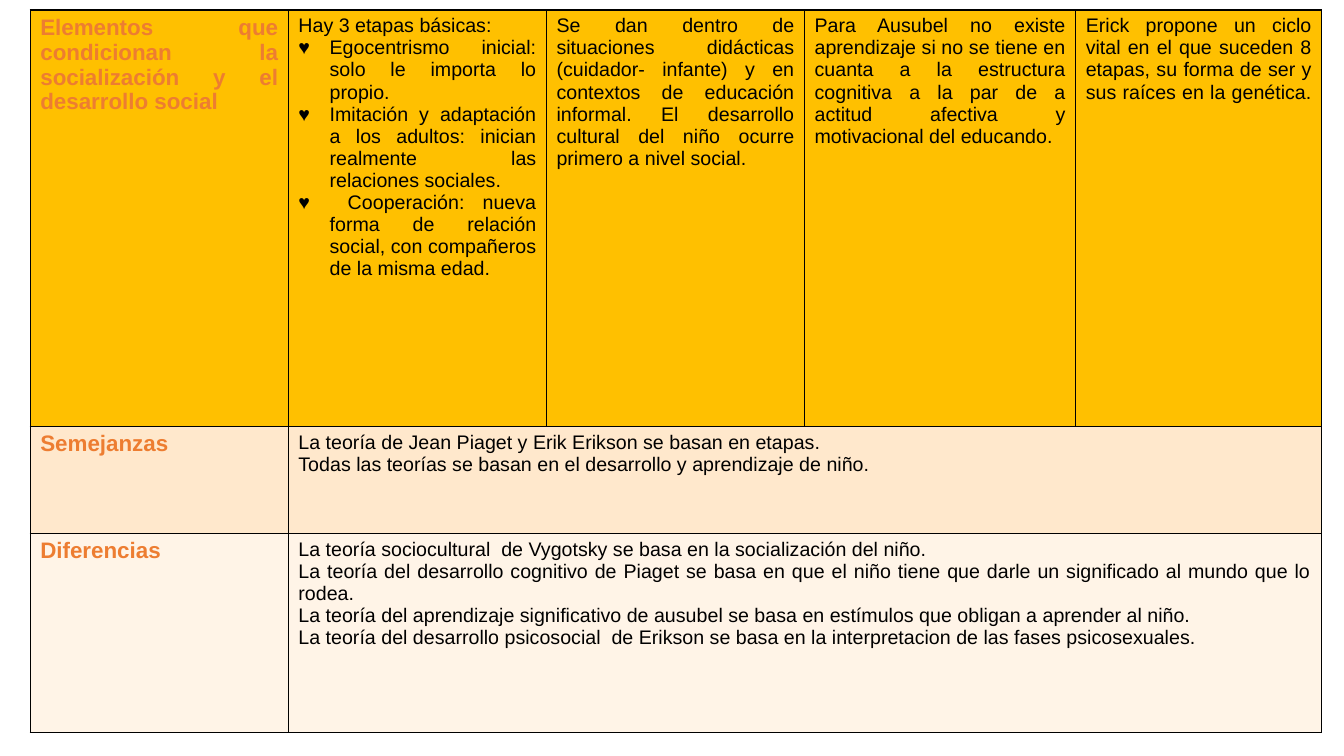
from lxml import etree
from pptx import Presentation
from pptx.dml.color import RGBColor
from pptx.enum.text import PP_ALIGN
from pptx.oxml.ns import qn
from pptx.util import Inches, Pt

JUSTIFY = PP_ALIGN.JUSTIFY
FONT = "Arial"
HEADING = {"size": 16, "color": "ED7D31", "bold": True}
BODY = {"size": 14, "color": "000000", "bold": False}
BORDER_COLOR, BORDER_WIDTH = "000000", 1
BULLET, BULLET_INDENT = "♥", 0.31

# Content: each row has a fill, a heading and cells made of paragraphs
ROWS = [
    ("FFC000", "Elementos que condicionan la socialización y el desarrollo social", [
        ["Hay 3 etapas básicas:",
         (BULLET, "Egocentrismo inicial: solo le importa lo propio."),
         (BULLET, "Imitación y adaptación a los adultos: inician realmente las relaciones sociales."),
         (BULLET, " Cooperación: nueva forma de relación social, con compañeros de la misma edad.")],
        ["Se dan dentro de situaciones didácticas (cuidador- infante) y en contextos de "
         "educación informal. El desarrollo cultural del niño ocurre primero a nivel social. "],
        ["Para Ausubel no existe aprendizaje si no se tiene en cuanta a la estructura "
         "cognitiva a la par de a actitud afectiva y motivacional del educando. "],
        ["Erick propone un ciclo vital en el que suceden 8 etapas, su forma de ser y "
         "sus raíces en la genética. "],
    ]),
    ("FFE8CC", "Semejanzas ", [
        ["La teoría de Jean Piaget y Erik Erikson se basan en etapas.",
         "Todas las teorías se basan en el desarrollo y aprendizaje de niño. "],
    ]),
    ("FFF4E7", "Diferencias ", [
        ["La teoría sociocultural  de Vygotsky se basa en la socialización del niño.",
         "La teoría del desarrollo cognitivo de Piaget se basa en que el niño tiene que "
         "darle un significado al mundo que lo rodea. ",
         "La teoría del aprendizaje significativo de ausubel se basa en estímulos que "
         "obligan a aprender al niño.",
         "La teoría del desarrollo psicosocial  de Erikson se basa en la interpretacion "
         "de las fases psicosexuales. "],
    ]),
]

# Grid, in inches
LEFT, TOP = 0.3, 0.1
COLUMN_WIDTHS = [2.56, 2.56, 2.56, 2.69, 2.44]
ROW_HEIGHTS = [4.13, 1.06, 1.98]


def rgb(color):
    return RGBColor.from_string(color)


def write_paragraph(paragraph, text, size, color, bold, bullet=None):
    paragraph.alignment = JUSTIFY
    run = paragraph.add_run()
    run.text = text
    run.font.name = FONT
    run.font.size = Pt(size)
    run.font.bold = bold
    run.font.color.rgb = rgb(color)
    if bullet:
        properties = paragraph._p.get_or_add_pPr()
        properties.set("marL", str(Inches(BULLET_INDENT)))
        properties.set("indent", str(-Inches(BULLET_INDENT)))
        etree.SubElement(properties, qn("a:buFont"), typeface=FONT)
        etree.SubElement(properties, qn("a:buChar"), char=bullet)


def fill_cell(cell, paragraphs, text_format):
    frame = cell.text_frame
    for index, item in enumerate(paragraphs):
        paragraph = frame.add_paragraph() if index else frame.paragraphs[0]
        bullet, text = item if isinstance(item, tuple) else (None, item)
        write_paragraph(paragraph, text, bullet=bullet, **text_format)


def style_cell(cell, fill_color):
    properties = cell._tc.get_or_add_tcPr()
    for side in ("a:lnL", "a:lnR", "a:lnT", "a:lnB"):
        line = etree.SubElement(properties, qn(side), w=str(Pt(BORDER_WIDTH)))
        solid = etree.SubElement(line, qn("a:solidFill"))
        etree.SubElement(solid, qn("a:srgbClr"), val=BORDER_COLOR)
    cell.fill.solid()
    cell.fill.fore_color.rgb = rgb(fill_color)


def main():
    presentation = Presentation()
    presentation.slide_width = Inches(13.33)
    presentation.slide_height = Inches(7.5)
    slide = presentation.slides.add_slide(presentation.slide_layouts[6])

    # Comparison table
    table = slide.shapes.add_table(
        len(ROW_HEIGHTS), len(COLUMN_WIDTHS), Inches(LEFT), Inches(TOP),
        Inches(sum(COLUMN_WIDTHS)), Inches(sum(ROW_HEIGHTS))).table
    table.first_row = table.horz_banding = False
    for column, width in zip(table.columns, COLUMN_WIDTHS):
        column.width = Inches(width)
    for row, height in zip(table.rows, ROW_HEIGHTS):
        row.height = Inches(height)

    # Rows with a single body cell span every column after the heading
    last_column = len(COLUMN_WIDTHS) - 1
    for row_index, (fill_color, heading, bodies) in enumerate(ROWS):
        for cell in table.rows[row_index].cells:
            style_cell(cell, fill_color)
        if len(bodies) == 1:
            table.cell(row_index, 1).merge(table.cell(row_index, last_column))
        fill_cell(table.cell(row_index, 0), [heading], HEADING)
        for column_index, paragraphs in enumerate(bodies, start=1):
            fill_cell(table.cell(row_index, column_index), paragraphs, BODY)

    presentation.save("out.pptx")


if __name__ == "__main__":
    main()
